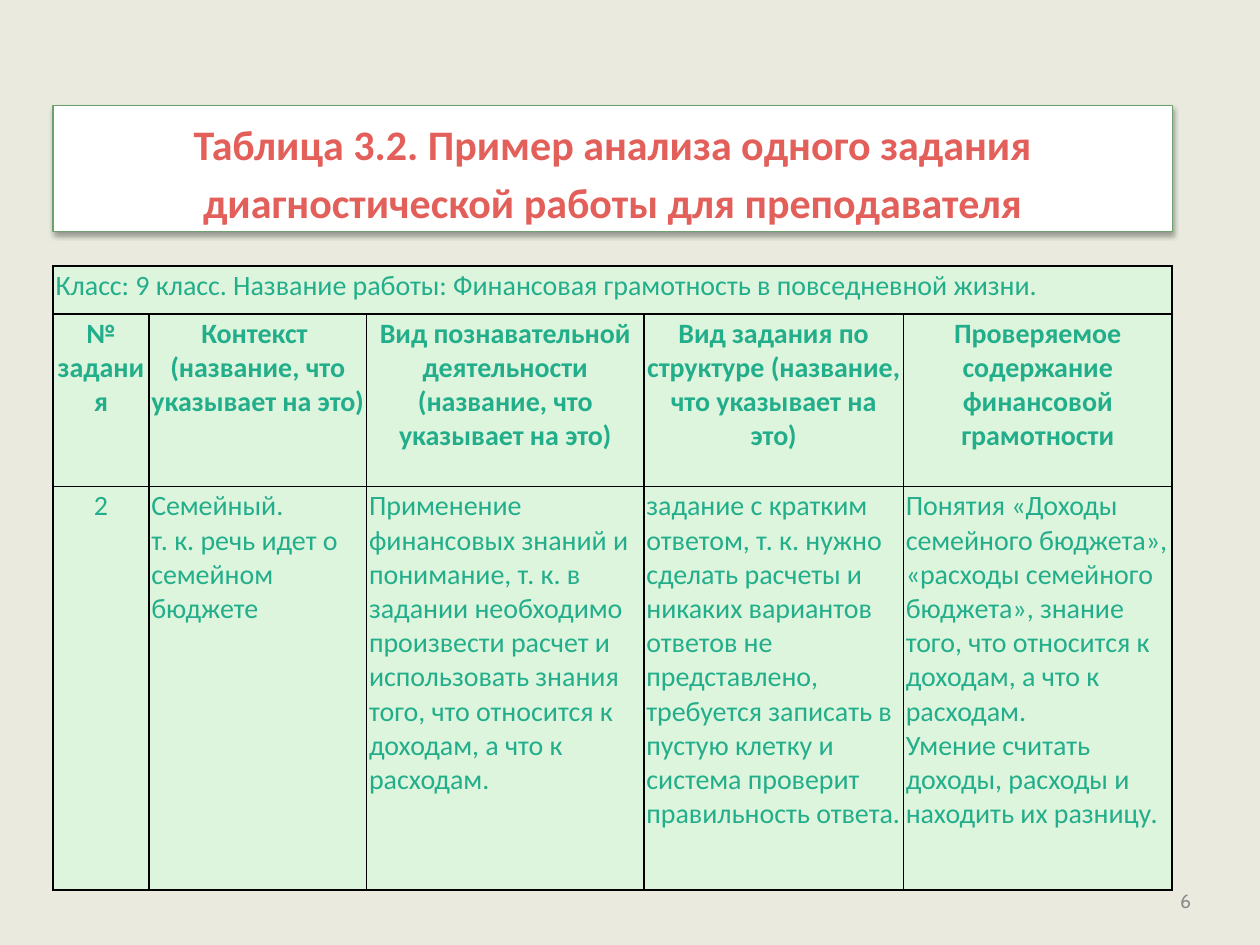
from lxml.etree import SubElement
from pptx import Presentation
from pptx.dml.color import RGBColor
from pptx.enum.text import MSO_ANCHOR as Anchor, MSO_AUTO_SIZE as AutoSize, PP_ALIGN as Align
from pptx.oxml import parse_xml
from pptx.oxml.ns import nsdecls, qn
from pptx.util import Cm, Pt

THEME = {
    "background": RGBColor.from_string("EAEBDE"),
    "panel": RGBColor.from_string("FFFFFF"),
    "panel_line": RGBColor.from_string("6EA172"),
    "cell": RGBColor.from_string("DDF5DD"),
    "border": "000000",
    "title": {"name": "Calibri", "size": Pt(24), "bold": True, "color": "E25F5A"},
    "header": {"name": "Calibri", "size": Pt(16), "bold": True, "color": "23AE8B"},
    "body": {"name": "Calibri", "size": Pt(16), "bold": False, "color": "23AE8B"},
    "number": {"name": "Cabin", "size": Pt(11), "bold": False, "color": "8C8C8C"},
}


def write(text_frame, text, style, alignment):
    """Fill a text frame, one paragraph for each line of text."""
    text_frame.text = text
    for paragraph in text_frame.paragraphs:
        paragraph.alignment = alignment
        for run in paragraph.runs:
            for name, value in THEME[style].items():
                if name == "color":
                    run.font.color.rgb = RGBColor.from_string(value)
                else:
                    setattr(run.font, name, value)


def add_borders(cell):
    properties = cell._tc.get_or_add_tcPr()
    for index, side in enumerate(("lnL", "lnR", "lnT", "lnB")):
        properties.insert(index, parse_xml(
            f'<a:{side} {nsdecls("a")} w="{Pt(1)}"><a:solidFill>'
            f'<a:srgbClr val="{THEME["border"]}"/></a:solidFill></a:{side}>'))


presentation = Presentation()
presentation.slide_width, presentation.slide_height = Cm(25.4), Cm(19.05)
slide = presentation.slides.add_slide(presentation.slide_layouts[5])
slide.background.fill.solid()
slide.background.fill.fore_color.rgb = THEME["background"]

# Slide number
number = slide.shapes.add_textbox(Cm(18.34), Cm(17.65), Cm(5.92), Cm(1.02))
number.text_frame.word_wrap = True
number.text_frame.vertical_anchor = Anchor.MIDDLE
write(number.text_frame, "6", "number", Align.RIGHT)

# Title panel
LEFT, WIDTH = Cm(1.07), Cm(22.56)
title = slide.shapes.title
title_box = {"left": LEFT, "top": Cm(2.13), "width": WIDTH, "height": Cm(2.54)}
for name, value in title_box.items():
    setattr(title, name, value)
title.fill.solid()
title.fill.fore_color.rgb = THEME["panel"]
title.line.color.rgb = THEME["panel_line"]
title.line.width = Pt(0.75)
effects = SubElement(title._element.spPr, qn("a:effectLst"))
shadow = SubElement(effects, qn("a:outerShdw"), blurRad=str(Pt(3.1)), dist=str(Pt(1.8)),
                    dir="5400000", rotWithShape="0")
shadow_color = SubElement(shadow, qn("a:srgbClr"), val="000000")
SubElement(shadow_color, qn("a:alpha"), val="35000")
title.text_frame.auto_size = AutoSize.NONE
title.text_frame.vertical_anchor = Anchor.MIDDLE
write(title.text_frame,
      "Таблица 3.2. Пример анализа одного задания диагностической работы для преподавателя",
      "title", Align.CENTER)
title.text_frame.paragraphs[0].line_spacing = 1.15

# Task analysis table
COLUMN_WIDTHS = (1.93, 4.39, 5.59, 5.23, 5.42)
ROW_HEIGHTS = (0.97, 3.48, 8.13)
ROWS = (
    ("Класс: 9 класс. Название работы: Финансовая грамотность в повседневной жизни.",
     "", "", "", ""),
    ("№ задания",
     "Контекст \n(название, что указывает на это)",
     "Вид познавательной деятельности (название, что указывает на это)",
     "Вид задания по структуре (название, что указывает на это)",
     "Проверяемое содержание финансовой грамотности"),
    ("2",
     "Семейный.\nт. к. речь идет о семейном бюджете",
     "Применение финансовых знаний и понимание, т. к. в задании необходимо произвести "
     "расчет и использовать знания того, что относится к доходам, а что к расходам.",
     "задание с кратким ответом, т. к. нужно сделать расчеты и никаких вариантов ответов "
     "не представлено, требуется записать в пустую клетку и система проверит "
     "правильность ответа.",
     "Понятия «Доходы семейного бюджета», «расходы семейного бюджета», знание того, "
     "что относится к доходам, а что к расходам.\n"
     "Умение считать доходы, расходы и находить их разницу."),
)
table = slide.shapes.add_table(len(ROWS), len(COLUMN_WIDTHS), LEFT, Cm(5.36), WIDTH,
                               Cm(sum(ROW_HEIGHTS))).table
table.first_row = table.horz_banding = False
for column, width in zip(table.columns, COLUMN_WIDTHS):
    column.width = Cm(width)
for row, height in zip(table.rows, ROW_HEIGHTS):
    row.height = Cm(height)
table.cell(0, 0).merge(table.cell(0, len(COLUMN_WIDTHS) - 1))

for row_index, texts in enumerate(ROWS):
    for column_index, text in enumerate(texts):
        cell = table.cell(row_index, column_index)
        for side in ("left", "right", "top", "bottom"):
            setattr(cell, f"margin_{side}", Cm(0.05))
        cell.fill.solid()
        cell.fill.fore_color.rgb = THEME["cell"]
        add_borders(cell)
        is_header = row_index == 1
        is_centered = is_header or (row_index == 2 and column_index == 0)
        if text:
            write(cell.text_frame, text, "header" if is_header else "body",
                  Align.CENTER if is_centered else Align.LEFT)

presentation.save("out.pptx")
